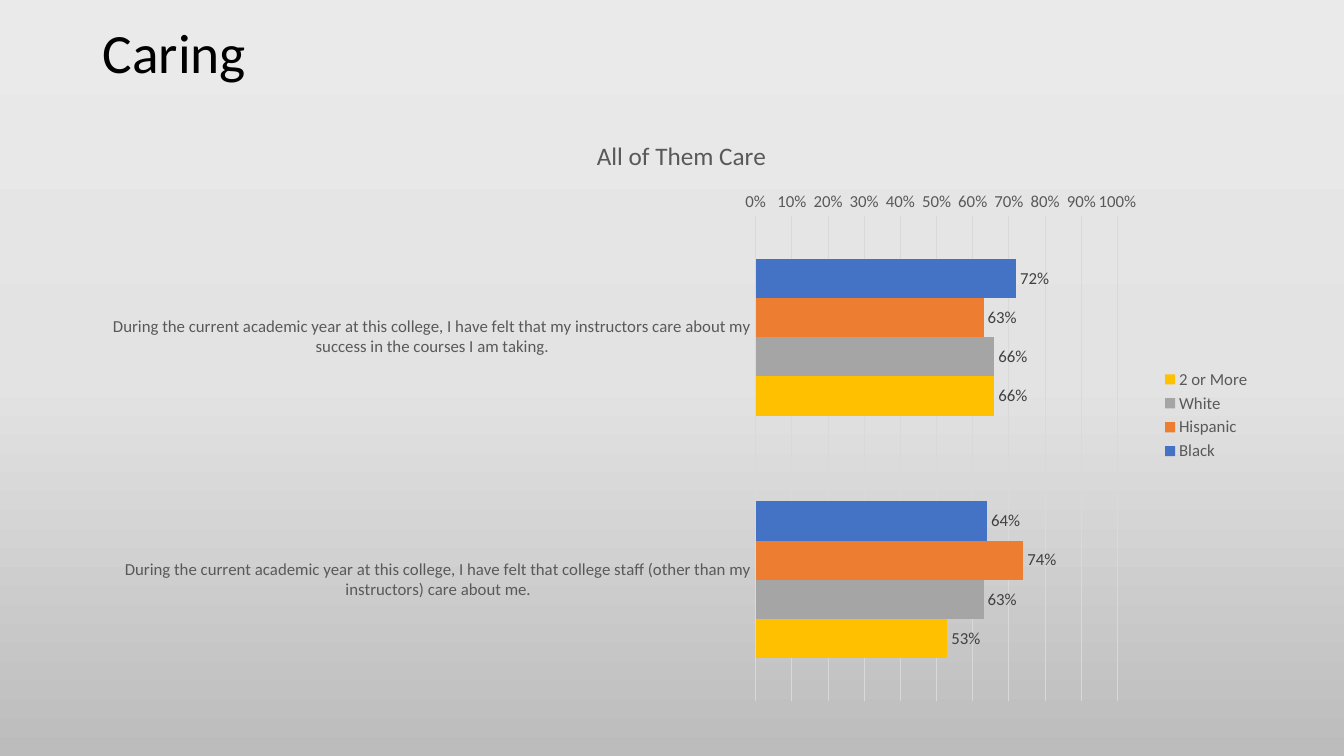
from copy import deepcopy
from lxml.etree import SubElement
from pptx import Presentation
from pptx.chart.data import CategoryChartData as ChartData
from pptx.dml.color import RGBColor as RGB
from pptx.enum.chart import XL_CHART_TYPE as Kind, XL_LABEL_POSITION as LabelAt
from pptx.enum.chart import XL_LEGEND_POSITION as LegendAt, XL_TICK_MARK as Tick
from pptx.enum.text import MSO_ANCHOR as Anchor
from pptx.oxml.ns import qn
from pptx.util import Inches, Pt

THEME = {
    "font": "Calibri",
    "heading": "000000", "muted": "595959", "value": "404040", "rule": "D9D9D9",
    "backdrop": ["EBEAEA", "E4E3E3", "BDBCBC"],
    "heading_size": 39.6, "chart_title_size": 18, "chart_size": 12,
    "rule_width": 0.75,
}
QUESTIONS = [
    "During the current academic year at this college, I have felt that "
    "my instructors care about my success in the courses I am taking.",
    "During the current academic year at this college, I have felt that "
    "college staff (other than my instructors) care about me.",
]
GROUPS = [
    ("Black", (0.72, 0.64), "4472C4"),
    ("Hispanic", (0.63, 0.74), "ED7D31"),
    ("White", (0.66, 0.63), "A5A5A5"),
    ("2 or More", (0.66, 0.53), "FFC000"),
]
PLOT_SHARES = {"x": 0.564, "y": 0.166, "w": 0.312, "h": 0.813}


def style(font, size, color):
    font.name = THEME["font"]
    font.size = Pt(THEME[size])
    font.bold = False
    font.color.rgb = RGB.from_string(THEME[color])


def rule(line):
    line.color.rgb = RGB.from_string(THEME["rule"])
    line.width = Pt(THEME["rule_width"])


deck = Presentation()
deck.slide_width, deck.slide_height = Inches(13.33), Inches(7.5)
slide = deck.slides.add_slide(deck.slide_layouts[6])

backdrop = slide.background.fill
backdrop.gradient()
backdrop.gradient_angle = 270
stop_list = slide.background._cSld.find(".//" + qn("a:gsLst"))
stop_list.insert(1, deepcopy(stop_list[0]))
for step, (stop, color) in enumerate(zip(backdrop.gradient_stops, THEME["backdrop"])):
    stop.position = step / 2
    stop.color.rgb = RGB.from_string(color)

heading = slide.shapes.add_textbox(
    Inches(0.92), Inches(0.22), Inches(11.5), Inches(0.67)).text_frame
heading.word_wrap = True
heading.vertical_anchor = Anchor.MIDDLE
heading.text = "Caring"
heading.paragraphs[0].line_spacing = 0.9
style(heading.paragraphs[0].runs[0].font, "heading_size", "heading")

survey = ChartData(number_format="0%")
survey.categories = QUESTIONS
for group, shares, _ in GROUPS:
    survey.add_series(group, shares)
chart = slide.shapes.add_chart(
    Kind.BAR_CLUSTERED, Inches(1.01), Inches(1.16), Inches(11.5), Inches(5.92),
    survey).chart
style(chart.font, "chart_size", "muted")

chart.has_title = True
chart_title = chart.chart_title.text_frame
chart_title.text = "All of Them Care"
style(chart_title.paragraphs[0].runs[0].font, "chart_title_size", "muted")
chart.chart_title.include_in_layout = False

chart.has_legend = True
chart.legend.position = LegendAt.RIGHT
chart.legend.include_in_layout = False
style(chart.legend.font, "chart_size", "muted")

questions_axis, share_axis = chart.category_axis, chart.value_axis
for axis in (questions_axis, share_axis):
    axis.major_tick_mark = axis.minor_tick_mark = Tick.NONE
    style(axis.tick_labels.font, "chart_size", "muted")
questions_axis.reverse_order = True
rule(questions_axis.format.line)
share_axis.minimum_scale, share_axis.maximum_scale = 0, 1
share_axis.major_unit = 0.1
share_axis.tick_labels.number_format = "0%"
share_axis.tick_labels.number_format_is_linked = False
share_axis.format.line.fill.background()
rule(share_axis.major_gridlines.format.line)

bars = chart.plots[0]
bars.gap_width, bars.overlap = 219, 0
bars.vary_by_categories = False
for series, (_, _, color) in zip(bars.series, GROUPS):
    series.format.fill.solid()
    series.format.fill.fore_color.rgb = RGB.from_string(color)
    series.invert_if_negative = False
    labels = series.data_labels
    labels.show_value = True
    labels.position = LabelAt.OUTSIDE_END
    labels.number_format = "0%"
    labels.number_format_is_linked = False
    style(labels.font, "chart_size", "value")

plot_area = chart._chartSpace.find(".//" + qn("c:plotArea"))
for blank_layout in plot_area.findall(qn("c:layout")):
    plot_area.remove(blank_layout)
layout = SubElement(plot_area, qn("c:layout"))
plot_area.insert(0, layout)
manual = SubElement(layout, qn("c:manualLayout"))
settings = {"layoutTarget": "inner", "xMode": "edge", "yMode": "edge", **PLOT_SHARES}
for setting, value in settings.items():
    SubElement(manual, qn(f"c:{setting}")).set("val", str(value))

deck.save("out.pptx")
